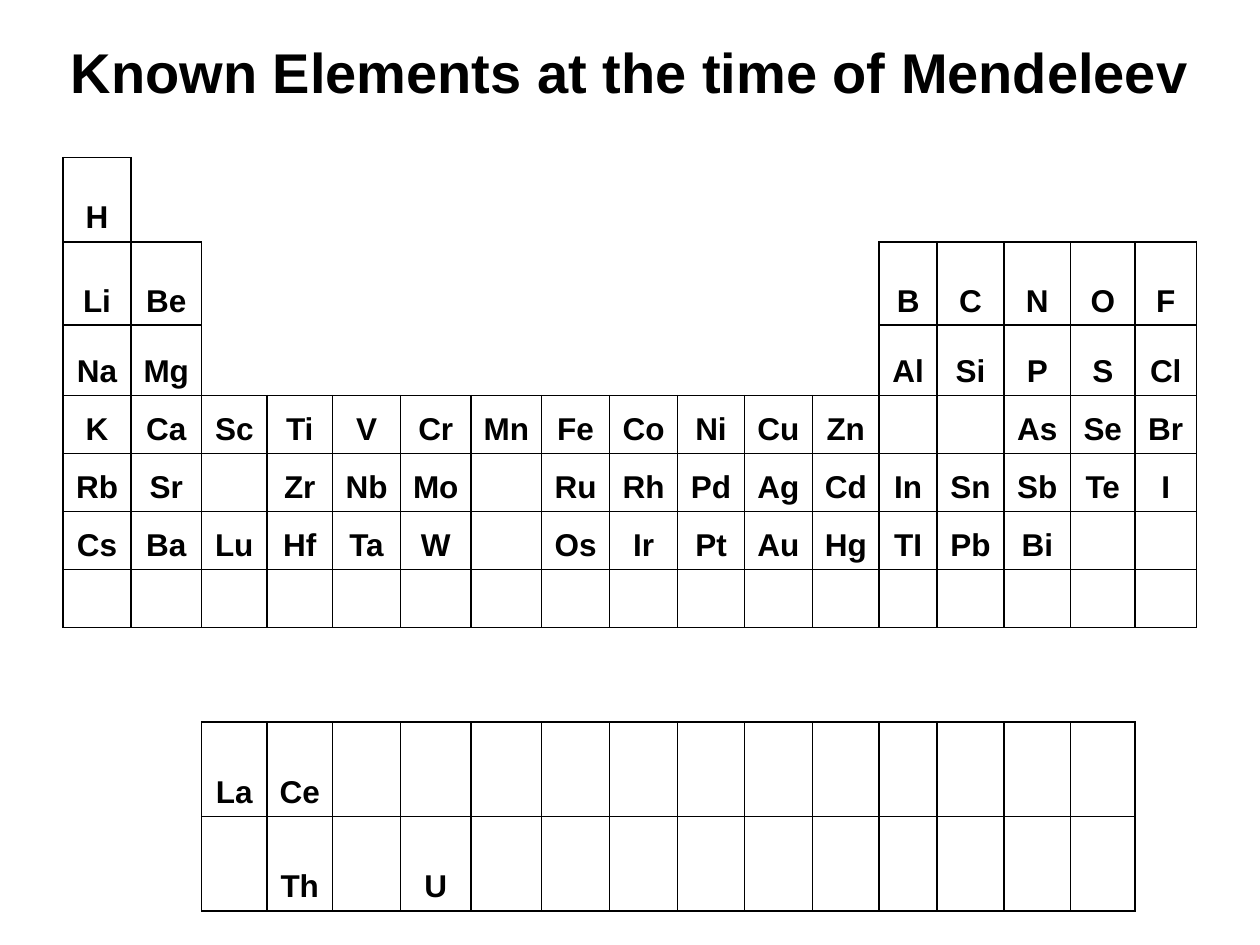
"""Builds a slide with the table of elements known at the time of Mendeleev."""
from lxml import etree
from pptx import Presentation
from pptx import util as u
from pptx.dml.color import RGBColor
from pptx.enum import text
from pptx.oxml import ns


def rgb(value):
    return RGBColor.from_string(value)


def write(tf, s, size=18, font="Arial", color="000000", bold=True):
    p = tf.paragraphs[0]
    p.alignment = text.PP_ALIGN.CENTER
    r = p.add_run()
    r.text = s
    r.font.size = u.Pt(size)
    r.font.name = font
    r.font.bold = bold
    r.font.color.rgb = rgb(color)
    return p


GRID = [row.split() for row in (
    "H _ _ _ _ _ _ _ _ _ _ _ _ _ _ _ _",
    "Li Be _ _ _ _ _ _ _ _ _ _ B C N O F",
    "Na Mg _ _ _ _ _ _ _ _ _ _ Al Si P S Cl",
    "K Ca Sc Ti V Cr Mn Fe Co Ni Cu Zn . . As Se Br",
    "Rb Sr . Zr Nb Mo . Ru Rh Pd Ag Cd In Sn Sb Te I",
    "Cs Ba Lu Hf Ta W . Os Ir Pt Au Hg TI Pb Bi . .",
    ". . . . . . . . . . . . . . . . .",
    "_ _ _ _ _ _ _ _ _ _ _ _ _ _ _ _ _",
    "_ _ La Ce . . . . . . . . . . . . _",
    "_ _ . Th . U . . . . . . . . . . _",
)]
COLS = [0.54, 0.56, 0.52, 0.52, 0.54, 0.56, 0.56, 0.54, 0.54,
        0.53, 0.54, 0.53, 0.46, 0.53, 0.53, 0.51, 0.49]
ROWS = [0.67, 0.66, 0.56] + [0.46] * 4 + [0.75] * 3
SIDES = {"a:lnL": (0, -1), "a:lnR": (0, 1), "a:lnT": (-1, 0), "a:lnB": (1, 0)}
INDENT = u.Inches(0.38)

prs = Presentation()
prs.slide_width = u.Inches(10)
prs.slide_height = u.Inches(7.5)
slide = prs.slides.add_slide(prs.slide_layouts[6])

frame = slide.shapes.add_table(len(ROWS), len(COLS), u.Inches(0.5), u.Inches(1.25),
                               u.Inches(9), u.Inches(sum(ROWS)))
table = frame.table
table.first_row = False
table.horz_banding = False
for column, width in zip(table.columns, COLS):
    column.width = u.Inches(width)
for row, height in zip(table.rows, ROWS):
    row.height = u.Inches(height)

boxed = {(i, j) for i, row in enumerate(GRID) for j, s in enumerate(row) if s != "_"}
for i, row in enumerate(GRID):
    for j, s in enumerate(row):
        cell = table.cell(i, j)
        cell.vertical_anchor = text.MSO_ANCHOR.BOTTOM
        cell.margin_left = cell.margin_right = u.Inches(0.08)
        tcPr = cell._tc.get_or_add_tcPr()
        for tag, (di, dj) in SIDES.items():
            ln = etree.SubElement(tcPr, ns.qn(tag), w=str(u.Pt(1)))
            if boxed & {(i, j), (i + di, j + dj)}:
                fill = etree.SubElement(ln, ns.qn("a:solidFill"))
                etree.SubElement(fill, ns.qn("a:srgbClr"), val="000000")
            else:
                etree.SubElement(ln, ns.qn("a:noFill"))
        cell.fill.background()
        if s not in "._":
            pPr = write(cell.text_frame, s)._p.get_or_add_pPr()
            pPr.set("marL", str(INDENT))
            pPr.set("indent", str(-INDENT))

sp = slide.shapes.add_textbox(u.Inches(0.25), u.Inches(0.25), u.Inches(9.5), u.Inches(0.63))
tf = sp.text_frame
tf.word_wrap = True
tf.auto_size = text.MSO_AUTO_SIZE.SHAPE_TO_FIT_TEXT
p = write(tf, "Known Elements at the time of Mendeleev", size=32)
before = etree.SubElement(p._p.get_or_add_pPr(), ns.qn("a:spcBef"))
etree.SubElement(before, ns.qn("a:spcPct"), val="50000")

prs.save("out.pptx")
